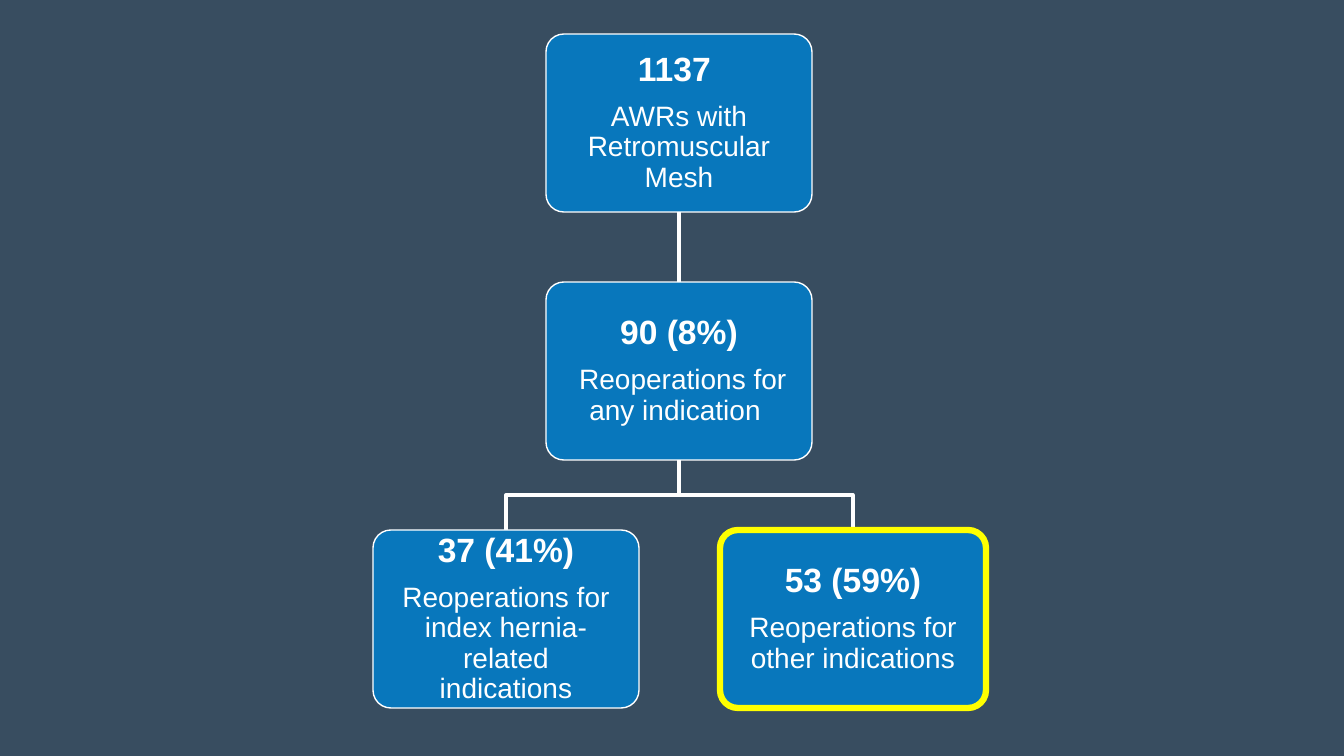
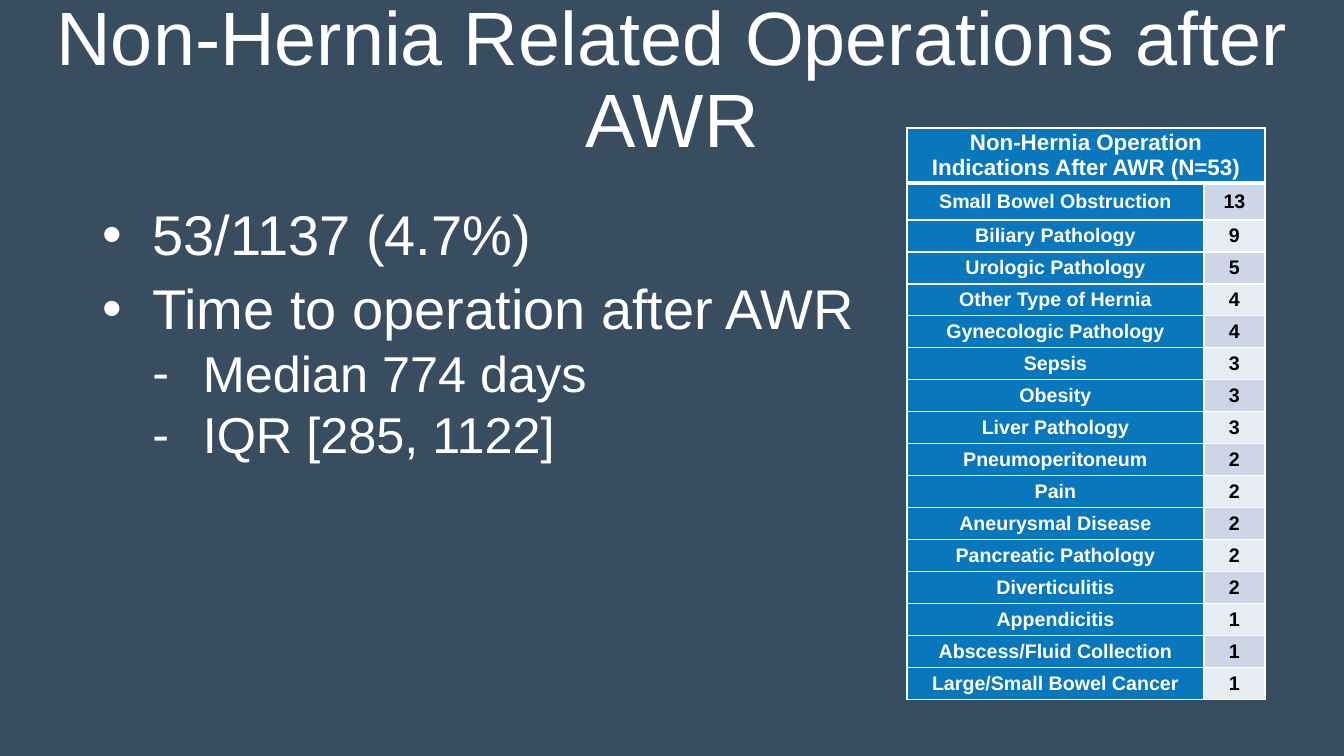
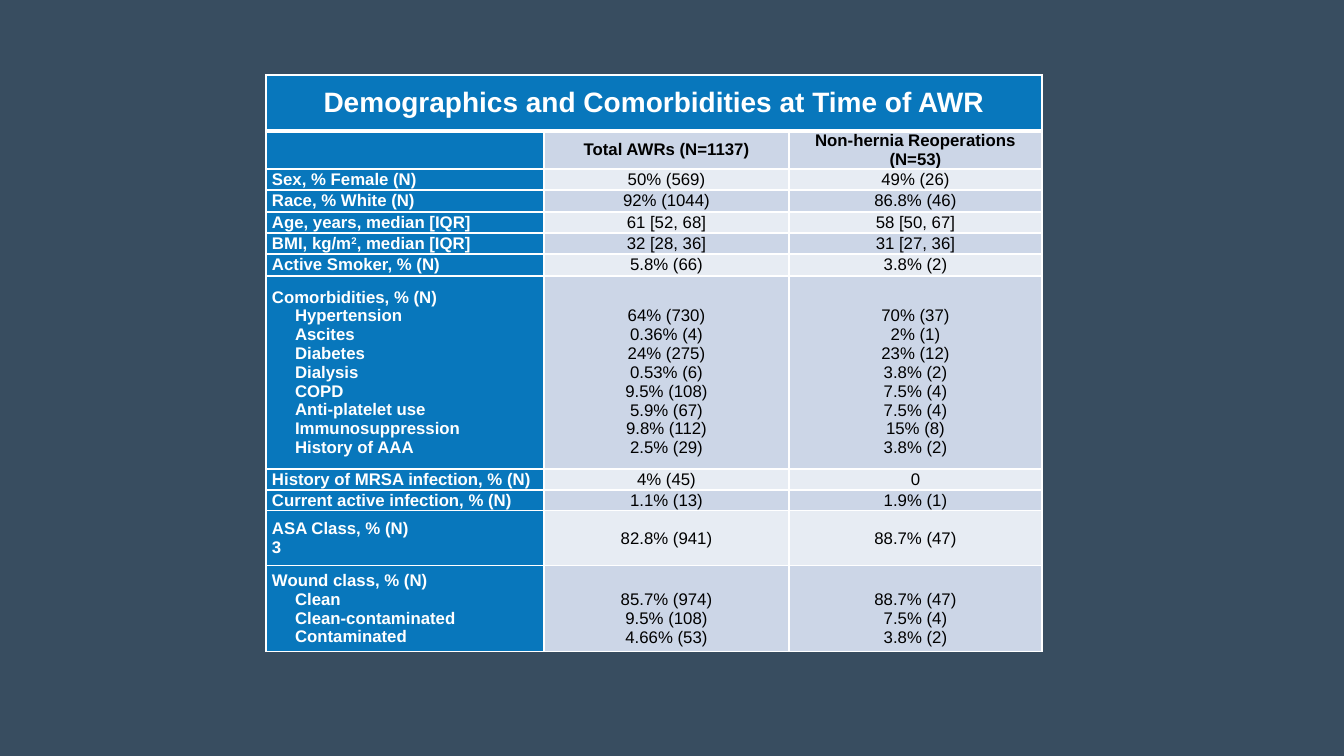
from lxml import etree
from pptx import Presentation
from pptx.dml.color import RGBColor
from pptx.enum.shapes import MSO_CONNECTOR, MSO_SHAPE
from pptx.enum.text import MSO_ANCHOR, MSO_AUTO_SIZE, PP_ALIGN
from pptx.oxml.ns import qn
from pptx.util import Pt

# Shared look
PX = 12192000 / 1344
FONT = "Arial"
SLATE = RGBColor(0x38, 0x4D, 0x60)
BLUE = RGBColor(0x08, 0x77, 0xBC)
WHITE = RGBColor(0xFF, 0xFF, 0xFF)
BLACK = RGBColor(0x00, 0x00, 0x00)
YELLOW = RGBColor(0xFF, 0xFF, 0x00)
BANDS = (RGBColor(0xE7, 0xEC, 0xF3), RGBColor(0xCC, 0xD6, 0xE7))
LEFT, CENTER = PP_ALIGN.LEFT, PP_ALIGN.CENTER
MIDDLE = MSO_ANCHOR.MIDDLE
NO_FIT = MSO_AUTO_SIZE.NONE
ROUND = MSO_SHAPE.ROUNDED_RECTANGLE
STRAIGHT = MSO_CONNECTOR.STRAIGHT


def write(para, text, size, color=WHITE, bold=False, align=CENTER):
    """Add text run by run; a part between ^ signs is superscript."""
    para.alignment = align
    for i, part in enumerate(text.split("^")):
        run = para.add_run()
        run.text = part
        font = run.font
        font.name, font.size, font.bold = FONT, Pt(size), bold
        font.color.rgb = color
        if i % 2:
            font._element.set("baseline", "30000")


def grid(slide, at, cols, rows, data, sizes, pad, align, strong):
    """Add a table with a merged head, blue labels and banded values."""
    box = [round(n * PX) for n in (*at, sum(cols), sum(rows))]
    table = slide.shapes.add_table(len(rows), len(cols), *box).table
    for col, width in zip(table.columns, cols):
        col.width = round(width * PX)
    for row, height in zip(table.rows, rows):
        row.height = round(height * PX)
    table.cell(0, 0).merge(table.cell(0, len(cols) - 1))

    for r, texts in enumerate(data):
        for c in range(len(cols)):
            cell = table.cell(r, c)
            label = r == 0 or c == 0
            cell.vertical_anchor = MIDDLE
            cell.margin_left = cell.margin_right = round(pad * PX)
            cell.margin_top = cell.margin_bottom = 0
            # Cell borders, thicker below the head
            props = cell._tc.get_or_add_tcPr()
            for side in "LRTB":
                thick = (r, side) in ((0, "B"), (1, "T"))
                line = etree.SubElement(props, qn("a:ln" + side), w=str(Pt(3 if thick else 1)))
                fill = etree.SubElement(line, qn("a:solidFill"))
                etree.SubElement(fill, qn("a:srgbClr"), val=str(WHITE))
            cell.fill.solid()
            cell.fill.fore_color.rgb = BLUE if label else BANDS[r % 2]
            if c >= len(texts) or not texts[c]:
                continue
            # Values start one line lower beside a label with sub-items
            if c and ">" in texts[0]:
                cell.margin_top = round(19 * PX)
            for i, text in enumerate(texts[c].split("\n")):
                para = cell.text_frame.paragraphs[0] if i == 0 else cell.text_frame.add_paragraph()
                if text.startswith(">"):
                    para._p.get_or_add_pPr().set("marL", str(round(23 * PX)))
                write(para, text.lstrip(">"), sizes[min(r, 1)],
                      WHITE if label else BLACK, label or r <= strong,
                      align if label and r else CENTER)


deck = Presentation()
deck.slide_width, deck.slide_height = round(1344 * PX), round(756 * PX)
back = deck.slide_master.background.fill
back.solid()
back.fore_color.rgb = SLATE
BODY, BLANK = deck.slide_layouts[1], deck.slide_layouts[6]

# Slide 1: patient flow
slide = deck.slides.add_slide(BLANK)
WIDE, HIGH, GAP, TOP = 266, 178, 70, 34
MID, WEST, EAST = 679, 506, 853
tops = [TOP + i * (HIGH + GAP) for i in range(3)]

# Links between the boxes
ends = (MID, tops[0] + HIGH, MID, tops[1])
link = slide.shapes.add_connector(STRAIGHT, *[round(n * PX) for n in ends])
link.line.color.rgb, link.line.width = WHITE, Pt(2.25)
etree.SubElement(link._element.spPr, qn("a:effectLst"))
fork = tops[1] + HIGH
bend = fork + GAP // 2
for x in (WEST, EAST):
    pen = slide.shapes.build_freeform(MID, fork, PX)
    pen.add_line_segments([(MID, bend), (x, bend), (x, tops[2])], close=False)
    elbow = pen.convert_to_shape()
    elbow.fill.background()
    elbow.line.color.rgb, elbow.line.width = WHITE, Pt(2.25)
    elbow.shadow.inherit = False

# Boxes
steps = [
    (MID, tops[0], "1137 ", "AWRs with Retromuscular Mesh", WHITE, 1),
    (MID, tops[1], "90 (8%)", " Reoperations for any indication ", WHITE, 1),
    (WEST, tops[2], "37 (41%)", "Reoperations for index hernia-related indications", WHITE, 1),
    (EAST, tops[2], "53 (59%)", "Reoperations for other indications", YELLOW, 4.5),
]
for x, y, count, label, edge, weight in steps:
    box = slide.shapes.add_shape(ROUND, *[round(n * PX) for n in (x - WIDE // 2, y, WIDE, HIGH)])
    box.adjustments[0] = 0.1
    box.shadow.inherit = False
    box.fill.solid()
    box.fill.fore_color.rgb = BLUE
    box.line.color.rgb, box.line.width = edge, Pt(weight)
    frame = box.text_frame
    frame.word_wrap, frame.vertical_anchor = True, MIDDLE
    frame.margin_left = frame.margin_right = round(15 * PX)
    frame.margin_top = frame.margin_bottom = round(15 * PX)
    head, note = frame.paragraphs[0], frame.add_paragraph()
    head.line_spacing = note.line_spacing = 0.9
    head.space_after = Pt(9.7)
    write(head, count, 24, bold=True)
    write(note, label, 20)

# Slide 2: title, list and indications
slide = deck.slides.add_slide(BODY)
title, body = slide.shapes.title, slide.placeholders[1]
for hold, place in ((title, (34, 9, 1276, 146)), (body, (92, 202, 1159, 480))):
    hold.left, hold.top, hold.width, hold.height = [round(n * PX) for n in place]
    hold.text_frame.word_wrap = True
    hold.text_frame.auto_size = NO_FIT
title.text_frame.vertical_anchor = MIDDLE
title.text_frame.paragraphs[0].line_spacing = 0.9
write(title.text_frame.paragraphs[0], "Non-Hernia Related Operations after AWR", 54)

points = [
    (0, "53/1137 (4.7%)"),
    (0, "Time to operation after AWR"),
    (1, "Median 774 days"),
    (1, "IQR [285, 1122]"),
]
HANG = round(50.4 * PX)
for i, (level, text) in enumerate(points):
    para = body.text_frame.paragraphs[0] if i == 0 else body.text_frame.add_paragraph()
    props = para._p.get_or_add_pPr()
    props.set("marL", str(HANG * (level + 1)))
    props.set("indent", str(-HANG))
    etree.SubElement(props, qn("a:buFont"), typeface=FONT)
    etree.SubElement(props, qn("a:buChar"), char="•-"[level])
    para.level = level
    para.line_spacing = 0.9
    para.space_before = Pt((10, 5)[level] if i else 0)
    write(para, text, (40, 36)[level], align=LEFT)

causes = [
    ("Non-Hernia Operation Indications After AWR (N=53)",),
    ("Small Bowel Obstruction", "13"),
    ("Biliary Pathology", "9"),
    ("Urologic Pathology", "5"),
    ("Other Type of Hernia", "4"),
    ("Gynecologic Pathology", "4"),
    ("Sepsis", "3"),
    ("Obesity", "3"),
    ("Liver Pathology", "3"),
    ("Pneumoperitoneum", "2"),
    ("Pain", "2"),
    ("Aneurysmal Disease", "2"),
    ("Pancreatic Pathology", "2"),
    ("Diverticulitis", "2"),
    ("Appendicitis", "1"),
    ("Abscess/Fluid Collection", "1"),
    ("Large/Small Bowel Cancer", "1"),
]
grid(slide, (907, 128), (297, 61), [55, 37] + [32] * 15, causes,
     (16, 14), 7, CENTER, len(causes))

# Slide 3: demographics
slide = deck.slides.add_slide(BLANK)
traits = [
    ("Demographics and Comorbidities at Time of AWR",),
    ("", "Total AWRs (N=1137)", "Non-hernia Reoperations (N=53)"),
    ("Sex, % Female (N)", "50% (569)", "49% (26)"),
    ("Race, % White (N)", "92% (1044)", "86.8% (46)"),
    ("Age, years, median [IQR]", "61 [52, 68]", "58 [50, 67]"),
    ("BMI, kg/m^2^, median [IQR]", "32 [28, 36]", "31 [27, 36]"),
    ("Active Smoker, % (N)", "5.8% (66)", "3.8% (2)"),
    ("Comorbidities, % (N)\n>Hypertension\n>Ascites\n>Diabetes\n>Dialysis\n>COPD\n"
     ">Anti-platelet use\n>Immunosuppression\n>History of AAA",
     "64% (730)\n0.36% (4)\n24% (275)\n0.53% (6)\n9.5% (108)\n5.9% (67)\n9.8% (112)\n2.5% (29)",
     "70% (37)\n2% (1)\n23% (12)\n3.8% (2)\n7.5% (4)\n7.5% (4)\n15% (8)\n3.8% (2)"),
    ("History of MRSA infection, % (N)", "4% (45)", "0"),
    ("Current active infection, % (N)", "1.1% (13)", "1.9% (1)"),
    ("ASA Class, % (N)\n3", "82.8% (941)", "88.7% (47)"),
    ("Wound class, % (N)\n>Clean\n>Clean-contaminated\n>Contaminated",
     "85.7% (974)\n9.5% (108)\n4.66% (53)", "88.7% (47)\n7.5% (4)\n3.8% (2)"),
]
grid(slide, (266, 75), (278, 245, 253),
     (56, 38, 21, 22, 21, 21, 22, 193, 21, 21, 55, 86), traits,
     (20, 12), 6, LEFT, 1)

deck.save("out.pptx")
